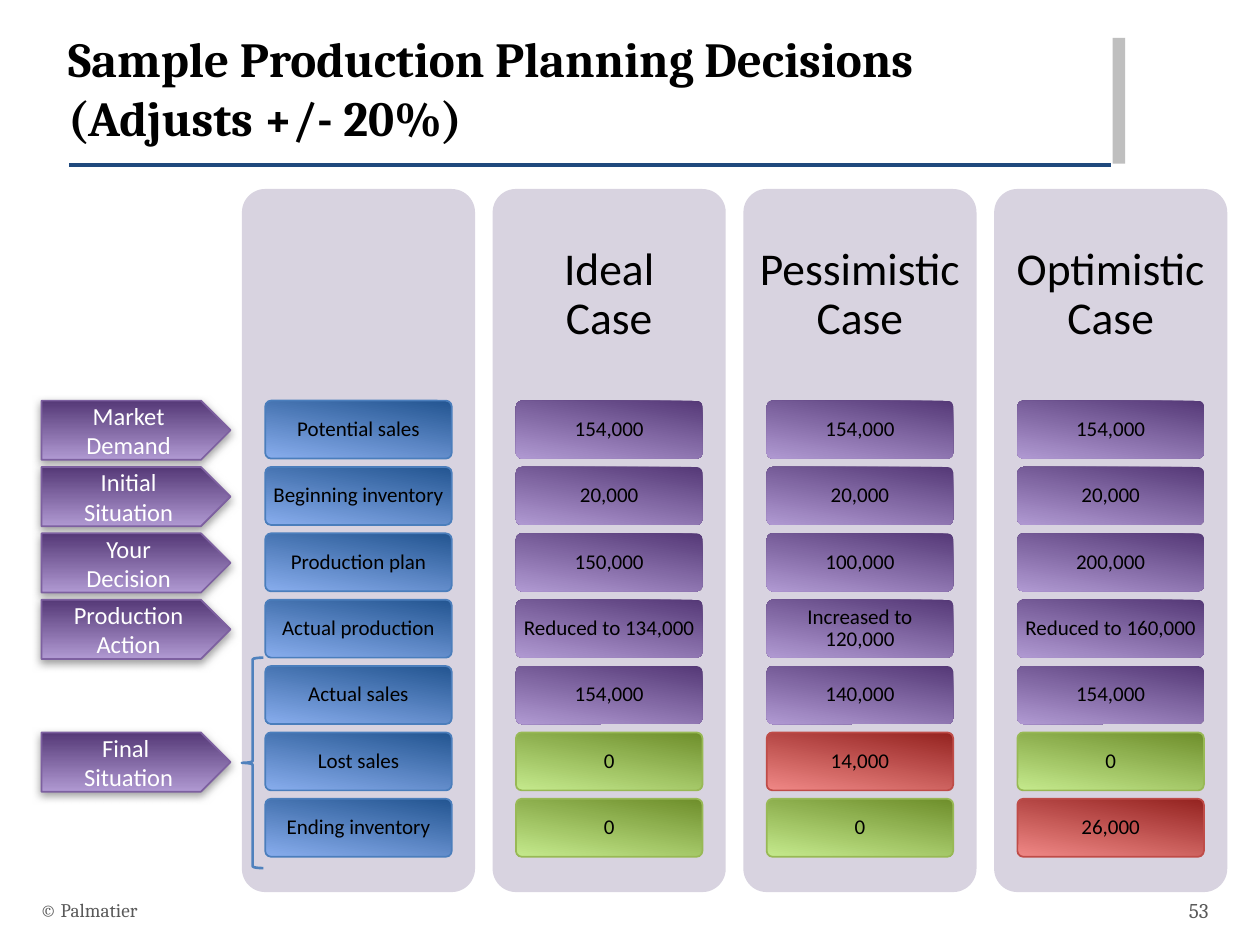
from collections import namedtuple

from lxml.etree import SubElement
from pptx import Presentation
from pptx.dml.color import RGBColor
from pptx.enum.shapes import MSO_CONNECTOR as Connector, MSO_SHAPE as Preset
from pptx.enum.text import MSO_ANCHOR as Anchor, MSO_AUTO_SIZE as AutoSize, PP_ALIGN as Align
from pptx.oxml.ns import qn
from pptx.util import Inches, Pt

Box = namedtuple("Box", "left top width height")
COLORS = {
    "black": "000000", "white": "FFFFFF", "footer": "595959",
    "rule": "1F497D", "bar": "BFBFBF", "panel": "D8D3E0",
    "brace": "4F81BD", "arrow_edge": "7D60A0", "shadow": "808080",
}
STYLES = {
    "blue": ("235591", "88ADED", "4B7EBC"),
    "purple": ("553977", "B099D2", None),
    "green": ("6E8E2B", "C5EA8D", "98B955"),
    "red": ("942320", "F08886", "BF4C48"),
}
ROWS = 7
ROW_STEP = (6.34 - 3.18) / (ROWS - 1)
COLUMN_STEP = 1.99
CARDS_TOP = 3.18
PLAIN = ["purple"] * 5
COLUMNS = [
    ("", ["Potential sales", "Beginning inventory", "Production plan", "Actual production",
          "Actual sales", "Lost sales", "Ending inventory"], ["blue"] * ROWS),
    ("Ideal\nCase", ["154,000", "20,000", "150,000", "Reduced to 134,000",
                     "154,000", "0", "0"], PLAIN + ["green", "green"]),
    ("Pessimistic Case", ["154,000", "20,000", "100,000", "Increased to 120,000",
                          "140,000", "14,000", "0"], PLAIN + ["red", "green"]),
    ("Optimistic Case", ["154,000", "20,000", "200,000", "Reduced to 160,000",
                         "154,000", "0", "26,000"], PLAIN + ["green", "red"]),
]
STAGES = {0: "Market Demand", 1: "Initial Situation", 2: "Your\nDecision",
          3: "Production Action", 5: "Final \nSituation"}


def rgb(value):
    """Turn a hex string into a colour."""
    return RGBColor.from_string(value)


def write(frame, text, size, color="black", font="Calibri", align=Align.CENTER,
          spacing=1.0, inset=(0.1, 0.05), anchor=Anchor.MIDDLE, bold=False):
    """Fill a text frame with one formatted paragraph."""
    frame.word_wrap = True
    frame.auto_size = AutoSize.NONE
    frame.vertical_anchor = anchor
    frame.margin_left = frame.margin_right = Inches(inset[0])
    frame.margin_top = frame.margin_bottom = Inches(inset[1])
    para = frame.paragraphs[0]
    para.alignment = align
    para.line_spacing = spacing
    for index, part in enumerate(text.split("\n")):
        if index:
            para.add_line_break()
        span = para.add_run()
        span.text = part
        span.font.name = font
        span.font.size = Pt(size)
        span.font.bold = bold
        span.font.color.rgb = rgb(COLORS[color])


def add_preset(page, kind, box, fill=None, line=None, width=1):
    """Add a preset shape without shadow, with optional solid fill and line."""
    shape = page.shapes.add_shape(kind, *map(Inches, box))
    shape.shadow.inherit = False
    if fill:
        shape.fill.solid()
        shape.fill.fore_color.rgb = rgb(fill)
    else:
        shape.fill.background()
    if line:
        shape.line.color.rgb = rgb(line)
        shape.line.width = Pt(width)
    else:
        shape.line.fill.background()
    return shape


def shade(shape, style, angle):
    """Give a shape the two-colour gradient of a style."""
    shape.fill.gradient()
    shape.fill.gradient_angle = 360 - angle
    for stop, value in zip(shape.fill.gradient_stops, STYLES[style]):
        stop.color.rgb = rgb(value)


def drop_shadow(shape):
    """Add a soft shadow below a shape."""
    effects = shape._element.spPr.find(qn("a:effectLst"))
    outer = SubElement(effects, qn("a:outerShdw"), blurRad=str(Pt(5)), dist=str(Pt(2)),
                       dir="5400000", rotWithShape="0")
    tint = SubElement(outer, qn("a:srgbClr"), val=COLORS["shadow"])
    SubElement(tint, qn("a:alpha"), val="75000")


def add_label(page, box, text, size, **options):
    """Add a text box with one paragraph."""
    write(page.shapes.add_textbox(*map(Inches, box)).text_frame, text, size, **options)


def add_heading(page, box):
    """Place the title with its rule and side bar."""
    rule_y = Inches(box.top + 1.13)
    rule = page.shapes.add_connector(Connector.STRAIGHT, Inches(box.left + 0.11), rule_y,
                                     Inches(box.left + 8.38), rule_y)
    rule.line.color.rgb = rgb(COLORS["rule"])
    rule.line.width = Pt(2)
    SubElement(rule._element.spPr, qn("a:effectLst"))
    add_preset(page, Preset.RECTANGLE, Box(box.left + 8.39, box.top + 0.12, 0.1, 1),
               COLORS["bar"])
    title = page.shapes.title
    title.left, title.top, title.width, title.height = map(Inches, box)
    write(title.text_frame, "Sample Production Planning Decisions (Adjusts +/- 20%)", 28,
          font="Cambria", align=Align.LEFT, anchor=Anchor.TOP, bold=True)
    title.text_frame.margin_right = Inches(0.5)


def add_column(page, box, header, values, styles):
    """Place one panel with its header and stack of cards."""
    panel = add_preset(page, Preset.ROUNDED_RECTANGLE, box, COLORS["panel"])
    panel.adjustments[0] = 0.1
    if header:
        add_label(page, box._replace(height=1.68), header, 26, spacing=0.9, inset=(0.11, 0.11))
    for row, (value, style) in enumerate(zip(values, styles)):
        place = Box(box.left + 0.185, CARDS_TOP + row * ROW_STEP, 1.48, 0.46)
        card = add_preset(page, Preset.ROUNDED_RECTANGLE, place, line=STYLES[style][2])
        card.adjustments[0] = 0.1
        shade(card, style, 100)
        write(card.text_frame, value, 12, spacing=0.9, inset=(0.03, 0.03))


def add_stages(page, box):
    """Place the stage arrows beside their rows and the brace of the last one."""
    for row, text in STAGES.items():
        place = Box(box.left, box.top + row * ROW_STEP, box.width, 0.47)
        arrow = add_preset(page, Preset.PENTAGON, place, line=COLORS["arrow_edge"])
        shade(arrow, "purple", 90)
        drop_shadow(arrow)
        write(arrow.text_frame, text, 14, color="white", inset=(0.12, 0.05))
    add_preset(page, Preset.LEFT_BRACE, Box(box.left + 1.59, box.top + 2.04, 0.17, 1.67),
               line=COLORS["brace"], width=1.5)


def add_footer(page, box):
    """Place the copyright line and the page number."""
    add_label(page, box._replace(width=6.7), "© Palmatier", 11, color="footer",
              font="Cambria", align=Align.LEFT)
    add_label(page, box._replace(left=box.left + box.width - 0.61, width=0.61), "53", 12,
              color="footer", font="Cambria", align=Align.RIGHT)


def main():
    """Build the slide and save it."""
    deck = Presentation()
    deck.slide_width, deck.slide_height = Inches(10), Inches(7.5)
    page = deck.slides.add_slide(deck.slide_layouts[5])
    add_heading(page, Box(0.44, 0.18, 8.29, 0.83))
    for index, column in enumerate(COLUMNS):
        add_column(page, Box(1.92 + index * COLUMN_STEP, 1.5, 1.85, 5.58), *column)
    add_stages(page, Box(0.33, CARDS_TOP, 1.5, 3.71))
    add_footer(page, Box(0.22, 7.02, 9.47, 0.4))
    deck.save("out.pptx")


if __name__ == "__main__":
    main()
